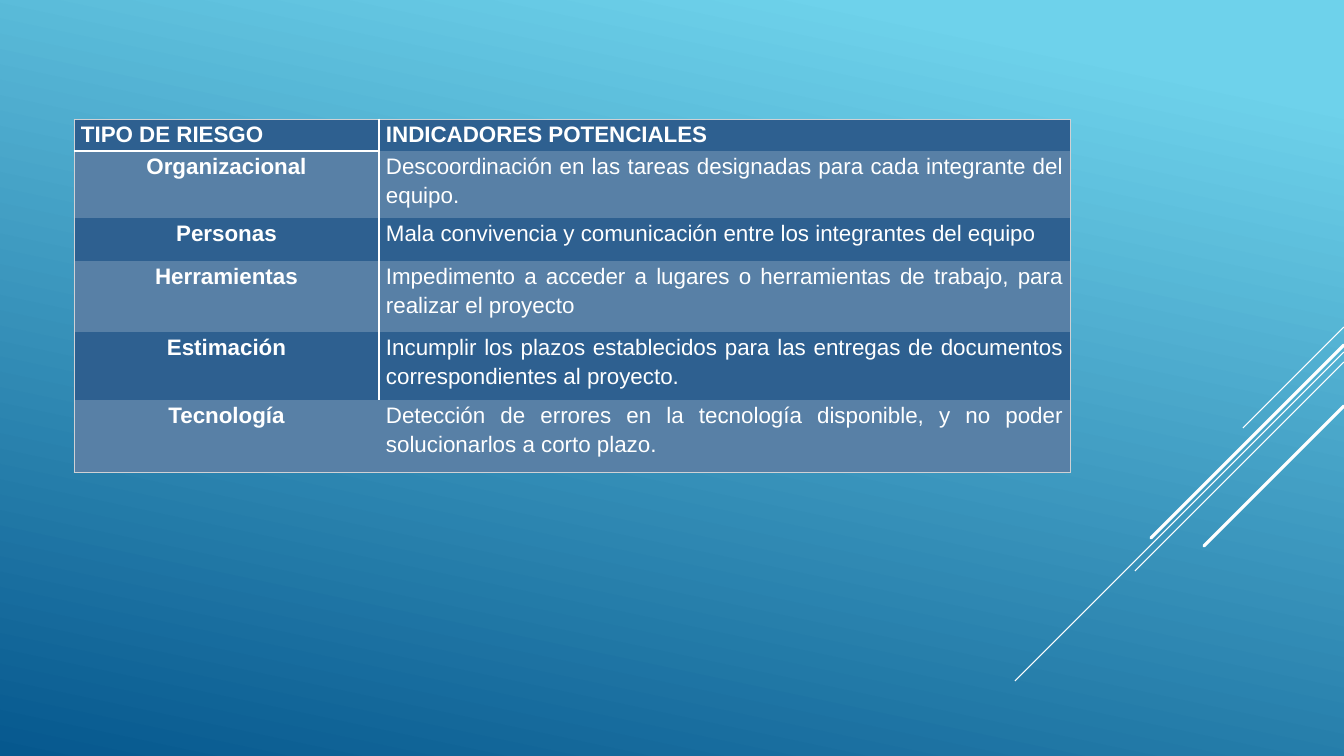
import pptx
import pptx.util
import pptx.dml.color
import pptx.enum.shapes
import pptx.enum.text
import pptx.oxml.ns
from lxml import etree

RGB = pptx.dml.color.RGBColor
ALIGN = pptx.enum.text.PP_ALIGN
WHITE = RGB(0xFF, 0xFF, 0xFF)
GRAY = RGB(0xCF, 0xD1, 0xD5)
DARK = RGB(0x2E, 0x60, 0x90)
PALE = RGB(0x58, 0x80, 0xA6)
SKY = RGB(0x6E, 0xD2, 0xEB)
DEEP = RGB(0x06, 0x58, 0x8E)

WIDE, HIGH = 1344, 756
SCALE = 12192000 / WIDE

THIN = (GRAY, 0.75, 60)
RULE = (WHITE, 1.25, 100)
HEAVY = (WHITE, 2.25, 100)

COLS = [305, 691]
ROWS = [
    (32, "TIPO DE RIESGO", "INDICADORES POTENCIALES"),
    (67, "Organizacional", "Descoordinación en las tareas designadas para cada integrante del equipo."),
    (43, "Personas", "Mala convivencia y comunicación entre los integrantes del equipo"),
    (71, "Herramientas", "Impedimento a acceder a lugares o herramientas de trabajo, para realizar el proyecto"),
    (68, "Estimación", "Incumplir los plazos establecidos para las entregas de documentos correspondientes al proyecto."),
    (73, "Tecnología", "Detección de errores en la tecnología disponible, y no poder solucionarlos a corto plazo."),
]
RAYS = [(0, 101, 0.75), (25, 329, 0.75), (35, 209, 0.75), (18, 193, 2.25), (79, 140, 2.25)]


def px(size):
    return pptx.util.Emu(round(size * SCALE))


def add(parent, tag, **attrs):
    return etree.SubElement(parent, pptx.oxml.ns.qn(tag), attrs)


def paint(slide):
    fill = slide.background.fill
    fill.gradient()
    fill.gradient_angle = 258
    for stop, color, place in zip(fill.gradient_stops, (SKY, DEEP), (0.1, 1)):
        stop.color.rgb = color
        stop.position = place


def draw_rays(slide, right, top):
    for drop, run, weight in RAYS:
        y = top + drop
        ray = slide.shapes.add_connector(
            pptx.enum.shapes.MSO_CONNECTOR.STRAIGHT, px(right), px(y), px(right - run), px(y + run))
        ray.line.color.rgb = WHITE
        ray.line.width = pptx.util.Pt(weight)
        if weight > 1:
            ray.line._get_or_add_ln().set("cap", "rnd")
        add(ray._element.spPr, "a:effectLst")


def edge(cell, tag, pen):
    props = cell._tc.get_or_add_tcPr()
    if pen is None:
        add(add(props, tag, w="0"), "a:noFill")
        return
    color, weight, alpha = pen
    line = add(props, tag, w=str(pptx.util.Pt(weight)))
    tint = add(add(line, "a:solidFill"), "a:srgbClr", val=str(color))
    add(tint, "a:alpha", val=str(alpha * 1000))


def frame(cell, row, col):
    last = len(ROWS) - 1
    split = RULE if row < last else None
    under = HEAVY if col == 0 else None
    edge(cell, "a:lnL", THIN if col == 0 else split)
    edge(cell, "a:lnR", THIN if col == 1 else split)
    edge(cell, "a:lnT", {0: THIN, 1: under}.get(row))
    edge(cell, "a:lnB", {0: under, last: THIN}.get(row))


def fill_cell(cell, text, row, col):
    frame(cell, row, col)
    cell.fill.solid()
    cell.fill.fore_color.rgb = PALE if row % 2 else DARK
    cell.margin_left = cell.margin_right = px(7)
    cell.margin_top = cell.margin_bottom = 0
    cell.text_frame.text = text
    para = cell.text_frame.paragraphs[0]
    para.alignment = ALIGN.CENTER if row and col == 0 else ALIGN.JUSTIFY
    para.line_spacing = 1.15
    font = para.runs[0].font
    font.name = "Arial"
    font.size = pptx.util.Pt(16)
    font.bold = row == 0 or col == 0
    font.color.rgb = WHITE


def draw_table(slide, left, top):
    high = sum(row[0] for row in ROWS)
    table = slide.shapes.add_table(
        len(ROWS), len(COLS), px(left), px(top), px(sum(COLS)), px(high)).table
    table.first_row = table.horz_banding = False
    for col, width in enumerate(COLS):
        table.columns[col].width = px(width)
    for row, (height, *texts) in enumerate(ROWS):
        table.rows[row].height = px(height)
        for col, text in enumerate(texts):
            fill_cell(table.cell(row, col), text, row, col)


def main():
    deck = pptx.Presentation()
    deck.slide_width, deck.slide_height = px(WIDE), px(HIGH)
    slide = deck.slides.add_slide(deck.slide_layouts[6])
    paint(slide)
    draw_rays(slide, WIDE, 327)
    draw_table(slide, 74, 119)
    deck.save("out.pptx")


if __name__ == "__main__":
    main()
